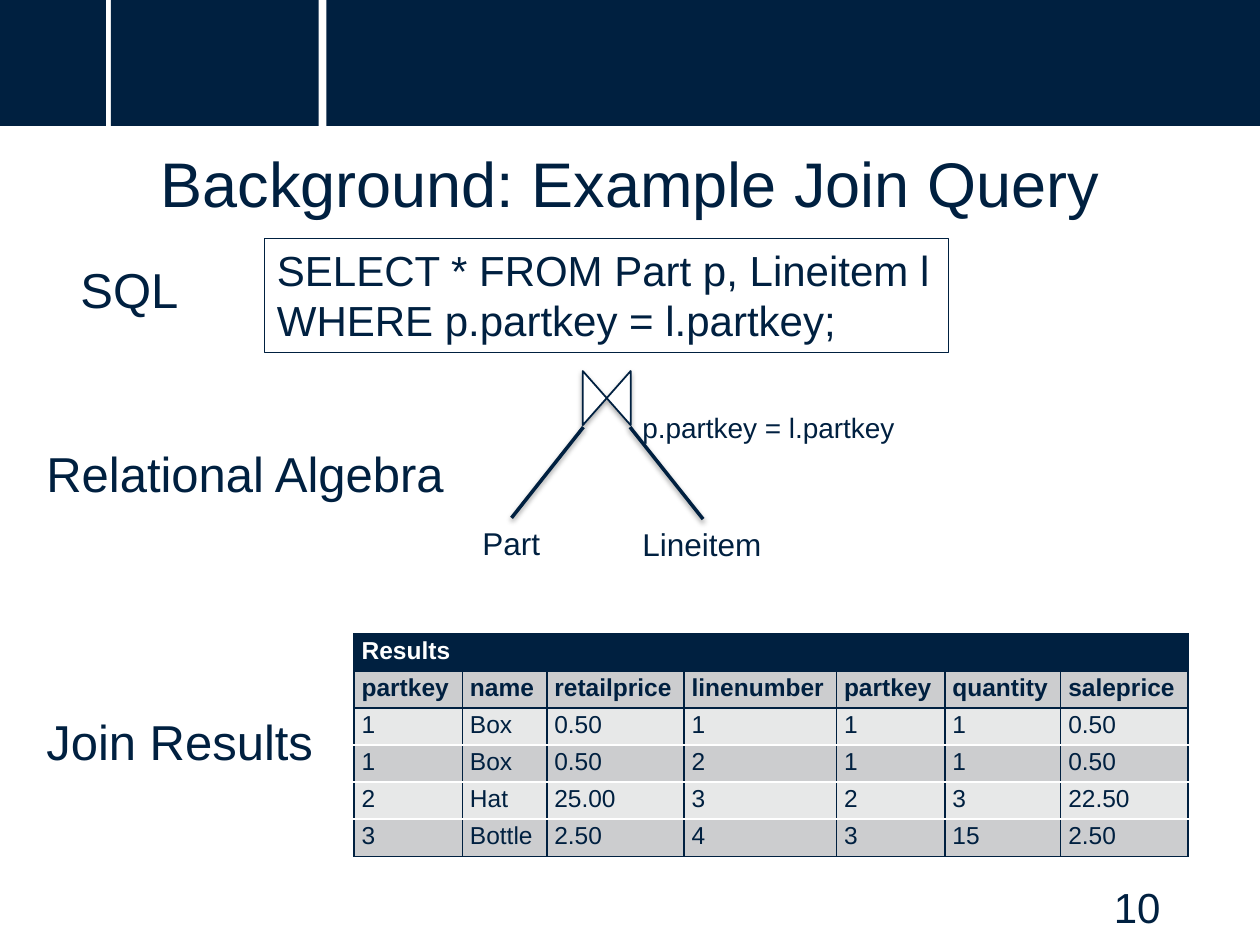
"""Build the slide that explains an example join query."""
from dataclasses import dataclass

from lxml import etree
from pptx import Presentation
from pptx.dml.color import RGBColor
from pptx.enum.shapes import MSO_CONNECTOR, MSO_SHAPE
from pptx.enum.text import MSO_AUTO_SIZE, PP_ALIGN
from pptx.oxml.ns import qn
from pptx.util import Inches, Pt

LEFT, CENTER, RIGHT = PP_ALIGN.LEFT, PP_ALIGN.CENTER, PP_ALIGN.RIGHT
GROW = MSO_AUTO_SIZE.SHAPE_TO_FIT_TEXT
RECTANGLE, COLLATE = MSO_SHAPE.RECTANGLE, MSO_SHAPE.FLOWCHART_COLLATE
STRAIGHT = MSO_CONNECTOR.STRAIGHT


@dataclass(frozen=True)
class Theme:
    font: str = "Arial"
    navy: str = "002040"
    white: str = "FFFFFF"
    dark_band: str = "CCCDCF"
    light_band: str = "E7E8E8"
    shadow: str = "000000"
    title: float = 36
    label: float = 28
    query: float = 24
    relation: float = 18
    predicate: float = 16
    cell: float = 14


@dataclass(frozen=True)
class Box:
    left: float
    top: float
    width: float
    height: float

    def lengths(self) -> tuple:
        return tuple(map(Inches, (self.left, self.top, self.width, self.height)))


@dataclass(frozen=True)
class Caption:
    box: Box
    lines: tuple[str, ...]
    size: float
    align: int = LEFT
    wrap: bool = False
    grow: bool = True
    top_inset: float = 0.05


THEME = Theme()
BANNER = (Box(0, 0, 0.84, 1), Box(0.88, 0, 1.65, 1), Box(2.59, 0, 7.41, 1))
QUERY = Caption(
    Box(2.1, 1.89, 5.43, 0.91),
    ("SELECT * FROM Part p, Lineitem l", "WHERE p.partkey = l.partkey;"),
    THEME.query,
)
JOIN_SYMBOL = Box(4.6, 2.97, 0.43, 0.38)
PART = Caption(Box(3.73, 4.11, 0.66, 0.4), ("Part",), THEME.relation)
LINEITEM = Caption(Box(5, 4.12, 1.16, 0.4), ("Lineitem",), THEME.relation)
BRANCHES = ((PART, 4.63), (LINEITEM, 5.0))
BRANCH_TOP = 3.39
CAPTIONS = (
    Caption(Box(0.69, 1.05, 8.62, 0.97), ("Background: Example Join Query",),
            THEME.title, CENTER, wrap=True, grow=False, top_inset=0.1),
    Caption(Box(7.06, 6.95, 2.25, 0.4), ("10",), THEME.query, RIGHT, wrap=True, grow=False),
    Caption(Box(5, 3.21, 2.23, 0.37), ("p.partkey = l.partkey",), THEME.predicate),
    Caption(Box(0.54, 2.01, 0.99, 0.57), ("SQL",), THEME.label),
    Caption(Box(0.27, 3.47, 3.4, 0.57), ("Relational Algebra",), THEME.label),
    Caption(Box(0.27, 5.6, 2.37, 0.57), ("Join Results",), THEME.label, wrap=True),
)
RESULTS_BOX = Box(2.81, 5.03, 6.61, 1.75)
COLUMN_WIDTHS = (0.86, 0.67, 1.09, 1.21, 0.86, 0.92, 1.01)
ROW_HEIGHTS = (0.29,) * 5 + (0.3,)
RESULTS = (
    ("Results", "", "", "", "", "", ""),
    ("partkey", "name", "retailprice", "linenumber", "partkey", "quantity", "saleprice"),
    ("1", "Box", "0.50", "1", "1", "1", "0.50"),
    ("1", "Box", "0.50", "2", "1", "1", "0.50"),
    ("2", "Hat", "25.00", "3", "2", "3", "22.50"),
    ("3", "Bottle", "2.50", "4", "3", "15", "2.50"),
)


def rgb(color: str) -> RGBColor:
    return RGBColor.from_string(color)


def add_run(paragraph, text: str, size: float, color: str = THEME.navy, bold: bool = False) -> None:
    run = paragraph.add_run()
    run.text = text
    run.font.name = THEME.font
    run.font.size = Pt(size)
    run.font.bold = bold
    run.font.color.rgb = rgb(color)


def add_caption(slide, caption: Caption):
    textbox = slide.shapes.add_textbox(*caption.box.lengths())
    frame = textbox.text_frame
    frame.word_wrap = caption.wrap
    frame.auto_size = GROW if caption.grow else MSO_AUTO_SIZE.NONE
    frame.margin_top = Inches(caption.top_inset)
    for index, line in enumerate(caption.lines):
        paragraph = frame.add_paragraph() if index else frame.paragraphs[0]
        paragraph.alignment = caption.align
        add_run(paragraph, line, caption.size)
    return textbox


def set_line(shape, width: float) -> None:
    shape.line.color.rgb = rgb(THEME.navy)
    shape.line.width = Pt(width)


def add_shadow(shape, distance: float, opacity: int) -> None:
    effects = etree.SubElement(shape._element.spPr, qn("a:effectLst"))
    shadow = etree.SubElement(
        effects, qn("a:outerShdw"), blurRad=str(Pt(3.1)), dist=str(Pt(distance)),
        dir="5400000", rotWithShape="0")
    color = etree.SubElement(shadow, qn("a:srgbClr"), val=THEME.shadow)
    etree.SubElement(color, qn("a:alpha"), val=str(opacity * 1000))


def add_banner(slide) -> None:
    for box in BANNER:
        block = slide.shapes.add_shape(RECTANGLE, *box.lengths())
        block.shadow.inherit = False
        block.fill.solid()
        block.fill.fore_color.rgb = rgb(THEME.navy)
        block.line.fill.background()


def add_join_tree(slide) -> None:
    join = slide.shapes.add_shape(COLLATE, *JOIN_SYMBOL.lengths())
    join.rotation = 90
    join.fill.solid()
    join.fill.fore_color.rgb = rgb(THEME.white)
    set_line(join, 1)
    add_shadow(join, 1.8, 35)
    for relation, join_x in BRANCHES:
        leaf = add_caption(slide, relation)
        end = Inches(join_x), Inches(BRANCH_TOP)
        branch = slide.shapes.add_connector(STRAIGHT, leaf.left, leaf.top, *end)
        branch.begin_connect(leaf, 0)
        set_line(branch, 2)
        add_shadow(branch, 1.6, 38)


def set_borders(cell, top: str, bottom: str) -> None:
    properties = cell._tc.get_or_add_tcPr()
    edges = {"L": THEME.navy, "R": THEME.navy, "T": top, "B": bottom}
    for index, (side, color) in enumerate(edges.items()):
        edge = etree.Element(qn(f"a:ln{side}"), w=str(Pt(1)))
        fill = etree.SubElement(edge, qn("a:solidFill"))
        etree.SubElement(fill, qn("a:srgbClr"), val=color)
        properties.insert(index, edge)


def add_results(slide) -> None:
    table = slide.shapes.add_table(
        len(RESULTS), len(COLUMN_WIDTHS), *RESULTS_BOX.lengths()).table
    for column, width in zip(table.columns, COLUMN_WIDTHS):
        column.width = Inches(width)
    for row, height in zip(table.rows, ROW_HEIGHTS):
        row.height = Inches(height)
    table.cell(0, 0).merge(table.cell(0, len(COLUMN_WIDTHS) - 1))
    last = len(RESULTS) - 1
    for r, values in enumerate(RESULTS):
        band = THEME.dark_band if r % 2 else THEME.light_band
        top = THEME.navy if r <= 2 else THEME.white
        bottom = THEME.navy if r < 2 or r == last else THEME.white
        for c, value in enumerate(values):
            cell = table.cell(r, c)
            cell.margin_left = cell.margin_right = Inches(0.06)
            cell.margin_top = cell.margin_bottom = Inches(0.03)
            cell.fill.solid()
            cell.fill.fore_color.rgb = rgb(band if r else THEME.navy)
            set_borders(cell, top, bottom)
            if value:
                color = THEME.navy if r else THEME.white
                add_run(cell.text_frame.paragraphs[0], value, THEME.cell, color, bold=r < 2)


def main() -> None:
    deck = Presentation()
    deck.slide_width, deck.slide_height = Inches(10), Inches(7.5)
    slide = deck.slides.add_slide(deck.slide_layouts[6])
    add_banner(slide)
    set_line(add_caption(slide, QUERY), 0.75)
    add_join_tree(slide)
    add_results(slide)
    for caption in CAPTIONS:
        add_caption(slide, caption)
    deck.save("out.pptx")


if __name__ == "__main__":
    main()
